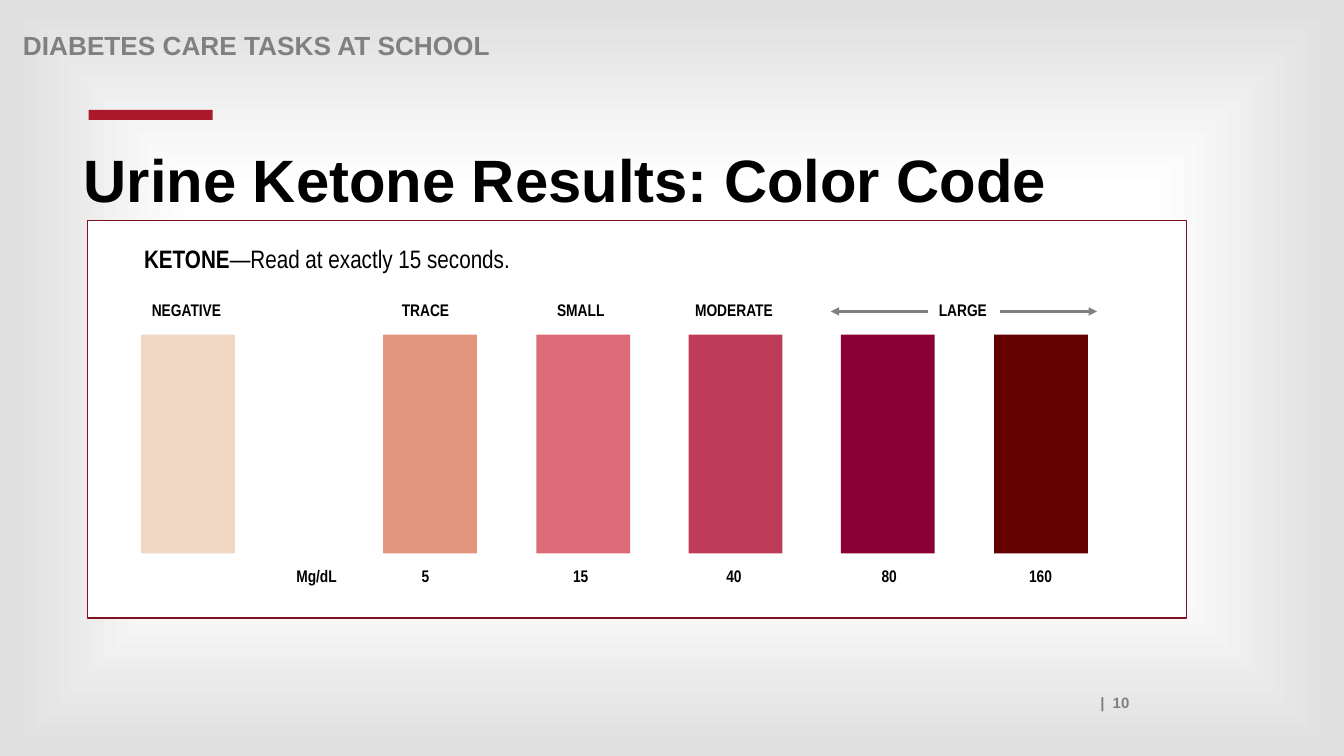
import dataclasses

import pptx
import pptx.dml.color
import pptx.enum.shapes
import pptx.enum.text
import pptx.oxml
import pptx.oxml.ns
import pptx.shapes.autoshape
import pptx.slide
import pptx.text.text
import pptx.util

ALIGN = pptx.enum.text.PP_ALIGN
EMU_PER_PX = 9144  # 100 px to the inch


@dataclasses.dataclass(frozen=True)
class Theme:
    heading_font: str = "Arial"
    chart_font: str = "Arial Narrow"
    black: str = "000000"
    grey: str = "808080"
    white: str = "FFFFFF"
    edge_grey: str = "E0E0E0"
    accent: str = "AA182C"
    panel_line: str = "7E1221"
    title_size: float = 42.7
    header_size: float = 18.7
    note_size: float = 18
    label_size: float = 12
    number_size: float = 10.7


@dataclasses.dataclass(frozen=True)
class Area:
    left: int
    top: int
    width: int
    height: int


@dataclasses.dataclass(frozen=True)
class Swatch:
    left: int
    center: int  # middle of the labels above and below
    color: str
    name: str = ""
    value: str = ""


THEME = Theme()
SWATCH_TOP, SWATCH_WIDTH, SWATCH_HEIGHT = 332, 93, 217
NAME_TOP, VALUE_TOP = 292, 556
LABEL_WIDTH, LABEL_HEIGHT = 104, 37
ARROW_Y = 309


def column(index: int) -> int:
    """Left edge of a swatch in the evenly spaced run."""
    return round(380 + 151.5 * index)


SWATCHES = [
    Swatch(140, 185, "EFD7C3", name="NEGATIVE"),
    Swatch(column(0), 422, "E4957D", name="TRACE", value="5"),
    Swatch(column(1), 576, "DC6B77", name="SMALL", value="15"),
    Swatch(column(2), 728, "BE3C5A", name="MODERATE", value="40"),
    Swatch(column(3), 882, "8B0034", value="80"),
    Swatch(column(4), 1032, "630000", value="160"),
]
ARROWS = [(920, 824), (992, 1088)]


def px(length: int) -> pptx.util.Emu:
    return pptx.util.Emu(length * EMU_PER_PX)


def rgb(color: str) -> pptx.dml.color.RGBColor:
    return pptx.dml.color.RGBColor.from_string(color)


def write(
    frame: pptx.text.text.TextFrame,
    text: str,
    *,
    size: float,
    font: str = THEME.heading_font,
    color: str = THEME.black,
    bold: bool = True,
    align: ALIGN = ALIGN.LEFT,
) -> None:
    """Append a formatted span to the only paragraph of a text frame."""
    frame.word_wrap = True
    frame.auto_size = pptx.enum.text.MSO_AUTO_SIZE.NONE
    frame.vertical_anchor = pptx.enum.text.MSO_ANCHOR.TOP
    para = frame.paragraphs[0]
    para.alignment = align
    span = para.add_run()
    span.text = text
    span.font.name = font
    span.font.size = pptx.util.Pt(size)
    span.font.bold = bold
    span.font.color.rgb = rgb(color)


def add_text_box(page: pptx.slide.Slide, area: Area) -> pptx.text.text.TextFrame:
    box = page.shapes.add_textbox(
        px(area.left), px(area.top), px(area.width), px(area.height))
    return box.text_frame


def add_label(page: pptx.slide.Slide, text: str, center: int, top: int) -> None:
    area = Area(center - LABEL_WIDTH // 2, top, LABEL_WIDTH, LABEL_HEIGHT)
    write(add_text_box(page, area), text, size=THEME.label_size,
          font=THEME.chart_font, align=ALIGN.CENTER)


def add_rectangle(
    page: pptx.slide.Slide, area: Area, color: str
) -> pptx.shapes.autoshape.Shape:
    box = page.shapes.add_shape(
        pptx.enum.shapes.MSO_SHAPE.RECTANGLE,
        px(area.left), px(area.top), px(area.width), px(area.height))
    box.shadow.inherit = False
    box.fill.solid()
    box.fill.fore_color.rgb = rgb(color)
    box.line.fill.background()
    return box


def add_arrow(page: pptx.slide.Slide, start: int, end: int) -> None:
    arrow = page.shapes.add_connector(
        pptx.enum.shapes.MSO_CONNECTOR.STRAIGHT,
        px(start), px(ARROW_Y), px(end), px(ARROW_Y))
    arrow.line.color.rgb = rgb(THEME.grey)
    arrow.line.width = pptx.util.Pt(2)
    head = pptx.oxml.parse_xml(
        f'<a:tailEnd {pptx.oxml.ns.nsdecls("a")} type="triangle"/>')
    arrow.line._get_or_add_ln().append(head)
    arrow._element.spPr.append(
        pptx.oxml.parse_xml(f'<a:effectLst {pptx.oxml.ns.nsdecls("a")}/>'))


def set_background(page: pptx.slide.Slide) -> None:
    """Glow that fades from a white middle to grey edges."""
    stops = [(12, THEME.white), (50, THEME.white), (98, THEME.edge_grey)]
    stop_xml = "".join(
        f'<a:gs pos="{percent * 1000}"><a:srgbClr val="{color}"/></a:gs>'
        for percent, color in stops)
    background = pptx.oxml.parse_xml(
        f'<p:bg {pptx.oxml.ns.nsdecls("p", "a")}><p:bgPr>'
        f'<a:gradFill rotWithShape="1"><a:gsLst>{stop_xml}</a:gsLst>'
        '<a:path path="shape">'
        '<a:fillToRect l="50000" t="50000" r="50000" b="50000"/></a:path>'
        '</a:gradFill><a:effectLst/></p:bgPr></p:bg>')
    page._element.cSld.insert(0, background)


def add_headings(page: pptx.slide.Slide) -> None:
    write(add_text_box(page, Area(121, 683, 1009, 28)), "|  10",
          size=THEME.number_size, color=THEME.grey, align=ALIGN.RIGHT)
    write(add_text_box(page, Area(13, 24, 1100, 28)),
          "DIABETES CARE TASKS AT SCHOOL",
          size=THEME.header_size, color=THEME.grey)
    add_rectangle(page, Area(88, 109, 123, 10), THEME.accent)

    title = page.shapes.title
    title.left, title.top = px(73), px(137)
    title.width, title.height = px(1103), px(89)
    write(title.text_frame, "Urine Ketone Results: Color Code",
          size=THEME.title_size)


def add_color_chart(page: pptx.slide.Slide) -> None:
    panel = add_rectangle(page, Area(87, 219, 1090, 394), THEME.white)
    panel.line.color.rgb = rgb(THEME.panel_line)
    panel.line.width = pptx.util.Pt(1)

    # Reading instruction
    note = add_text_box(page, Area(133, 236, 569, 49))
    for text, bold in [("KETONE", True), ("—Read at exactly 15 seconds.", False)]:
        write(note, text, size=THEME.note_size, font=THEME.chart_font, bold=bold)

    # Swatches with their names and values
    for swatch in SWATCHES:
        add_rectangle(
            page, Area(swatch.left, SWATCH_TOP, SWATCH_WIDTH, SWATCH_HEIGHT),
            swatch.color)
        for text, top in [(swatch.name, NAME_TOP), (swatch.value, VALUE_TOP)]:
            if text:
                add_label(page, text, swatch.center, top)

    # Unit, and the range shared by the last two swatches
    add_label(page, "Mg/dL", 314, VALUE_TOP)
    add_label(page, "LARGE", 955, NAME_TOP)
    for start, end in ARROWS:
        add_arrow(page, start, end)


def main() -> None:
    deck = pptx.Presentation()
    deck.slide_width, deck.slide_height = px(1333), px(750)
    page = deck.slides.add_slide(deck.slide_layouts.get_by_name("Title Only"))
    set_background(page)
    add_headings(page)
    add_color_chart(page)
    deck.save("out.pptx")


if __name__ == "__main__":
    main()
